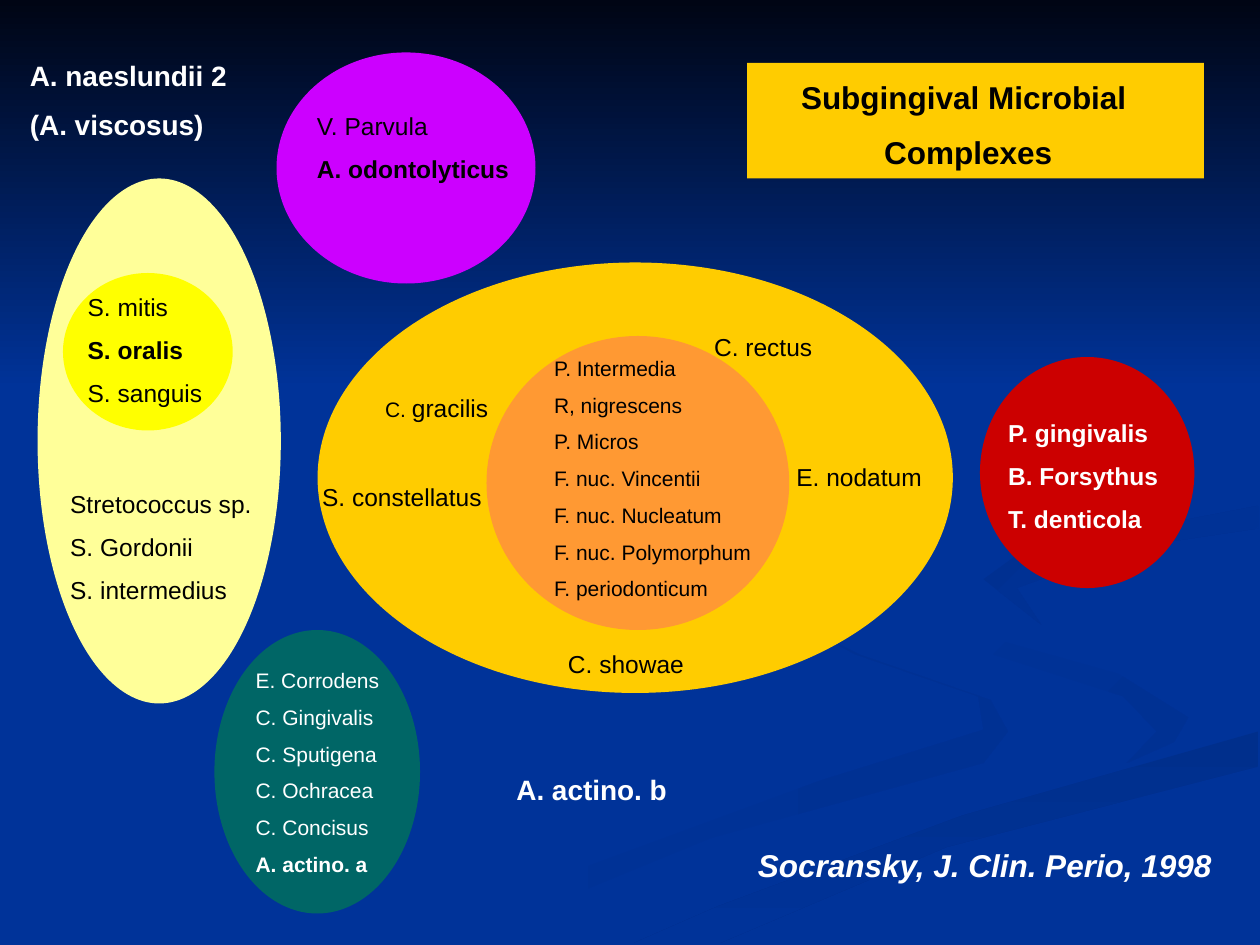
import pptx
import pptx.dml.color
import pptx.enum.shapes
import pptx.enum.text
import pptx.util

Pt = pptx.util.Pt
SHAPE = pptx.enum.shapes.MSO_SHAPE
ALIGN = pptx.enum.text.PP_ALIGN
NAVY, BLACK, WHITE, AMBER = "003399", "000000", "FFFFFF", "FFCC00"

# Each ribbon: gradient colours, clockwise angle, outline in points
RIBBONS = [
    ((NAVY, "003193"), 0, [
        (566, 400), (491, 374), (413, 334), (489, 374), (559, 398), (562, 417),
        (469, 446), (216, 539), (260, 539), (406, 479), (562, 436), (576, 418)]),
    ((NAVY, "003193"), 45, [
        (679, 410), (639, 385), (557, 362), (521, 334), (552, 369), (642, 398),
        (661, 418), (644, 436), (671, 424)]),
    (("002F8C", NAVY), 90, [
        (362, 539), (411, 539), (541, 484), (719, 438), (719, 418), (550, 466), (410, 518)]),
    (("003091", NAVY), 45, [
        (562, 331), (595, 357), (581, 336), (645, 313), (719, 302), (719, 289), (584, 315)]),
]


def rgb(value):
    return pptx.dml.color.RGBColor.from_string(value)


def paint(sp, colors, angle=0):
    """Fill with one colour, or with a gradient running at a clockwise angle."""
    sp.shadow.inherit = False
    sp.line.fill.background()
    if len(colors) == 1:
        sp.fill.solid()
        sp.fill.fore_color.rgb = rgb(colors[0])
        return
    sp.fill.gradient()
    sp.fill.gradient_angle = (360 - angle) % 360
    for stop, color in zip(sp.fill.gradient_stops, colors):
        stop.color.rgb = rgb(color)


def add_block(slide, kind, box, *colors, angle=0):
    sp = slide.shapes.add_shape(kind, *map(Pt, box))
    paint(sp, colors, angle)


def add_run(p, text, size, color, bold=False, italic=False):
    r = p.add_run()
    r.text = text
    r.font.name = "Arial"
    r.font.size = Pt(size)
    r.font.bold = bold
    r.font.italic = italic
    r.font.color.rgb = rgb(color)


def add_text(slide, text, left, top, width, size=14, color=BLACK, bold=False,
             italic=False, align=ALIGN.LEFT, bold_lines=()):
    """Add one paragraph per line; bold_lines lists the lines to set bold."""
    lines = text.split("\n")
    height = 7.2 + size * (1.15 * len(lines) + 0.55 * (len(lines) - 1))
    tf = slide.shapes.add_textbox(Pt(left), Pt(top), Pt(width), Pt(height)).text_frame
    tf.word_wrap = True
    tf.auto_size = pptx.enum.text.MSO_AUTO_SIZE.SHAPE_TO_FIT_TEXT
    for i, line in enumerate(lines):
        p = tf.paragraphs[0] if i == 0 else tf.add_paragraph()
        p.alignment = align
        p.space_before = Pt(0.55 * size if i else 0)
        add_run(p, line, size, color, bold or i in bold_lines, italic)
    return tf


def add_background(slide, width):
    slide.background.fill.solid()
    slide.background.fill.fore_color.rgb = rgb(NAVY)
    for colors, angle, points in RIBBONS:
        builder = slide.shapes.build_freeform(*points[0], scale=Pt(1))
        builder.add_line_segments(points[1:], close=True)
        paint(builder.convert_to_shape(), colors, angle)
    add_block(slide, SHAPE.RECTANGLE, (0, 0, width, 222), "000514", NAVY, angle=90)


def add_complex(slide, box, fill, text, dx, dy, width, **style):
    """Draw an ellipse with its species list offset from the box corner."""
    add_block(slide, SHAPE.OVAL, box, fill)
    add_text(slide, text, box[0] + dx, box[1] + dy, width, **style)


def add_orange_complex(slide, box):
    x, y = box[:2]
    add_block(slide, SHAPE.OVAL, box, AMBER)
    add_complex(slide, (x + 96.5, y + 42, 173, 168), "FF9933",
                "P. Intermedia\nR, nigrescens\nP. Micros\nF. nuc. Vincentii\n"
                "F. nuc. Nucleatum\nF. nuc. Polymorphum\nF. periodonticum",
                31.5, 7.5, 135, size=12)
    for text, dx, dy, width in [("S. constellatus", -4.5, 122, 115),
                                ("C. showae", 136, 217.5, 122),
                                ("E. nodatum", 266.5, 110.5, 91),
                                ("C. rectus", 219.5, 36, 91)]:
        add_text(slide, text, x + dx, y + dy, width)
    gracilis = add_text(slide, "C. ", x + 31.5, y + 71, 80, size=12)
    add_run(gracilis.paragraphs[0], "gracilis", 14, BLACK)


def add_yellow_complex(slide, box):
    x, y = box[:2]
    add_complex(slide, box, "FFFF99", "Stretococcus sp.\nS. Gordonii\nS. intermedius",
                11.5, 174, 120)
    add_complex(slide, (x + 14.5, y + 54, 97, 90), "FFFF00",
                "S. mitis\nS. oralis\nS. sanguis", 7, 7.5, 104, bold_lines=(1,))


def add_title(slide, box):
    add_block(slide, SHAPE.RECTANGLE, box, AMBER)
    add_text(slide, "Subgingival Microbial \nComplexes", box[0] + 3.5, box[1] + 5, 245.5,
             size=18, bold=True, align=ALIGN.CENTER)


def main():
    prs = pptx.Presentation()
    prs.slide_width, prs.slide_height = Pt(720), Pt(540)
    slide = prs.slides.add_slide(prs.slide_layouts[6])
    add_background(slide, 720)
    add_orange_complex(slide, (181.5, 150, 363, 246))
    add_complex(slide, (560, 204, 122.5, 132), "CC0000",
                "P. gingivalis\nB. Forsythus\nT. denticola", 9, 31.5, 117,
                color=WHITE, bold=True)
    add_complex(slide, (122.5, 360, 117.5, 162), "006666",
                "E. Corrodens\nC. Gingivalis\nC. Sputigena\nC. Ochracea\n"
                "C. Concisus\nA. actino. a", 16.5, 18, 100,
                size=12, color=WHITE, bold_lines=(5,))
    add_yellow_complex(slide, (21.5, 102, 139, 300))
    add_complex(slide, (158, 30, 148, 132), "CC00FF", "V. Parvula\nA. odontolyticus",
                16, 30, 138, bold_lines=(1,))
    add_title(slide, (427, 36, 261, 66))
    add_text(slide, "A. actino. b", 288, 438, 120, size=16, color=WHITE, bold=True)
    add_text(slide, "A. naeslundii 2\n(A. viscosus)", 10, 30, 144,
             size=16, color=WHITE, bold=True)
    add_text(slide, "Socransky, J. Clin. Perio, 1998", 426, 480, 282,
             size=18, color=WHITE, bold=True, italic=True)
    prs.save("out.pptx")


if __name__ == "__main__":
    main()
